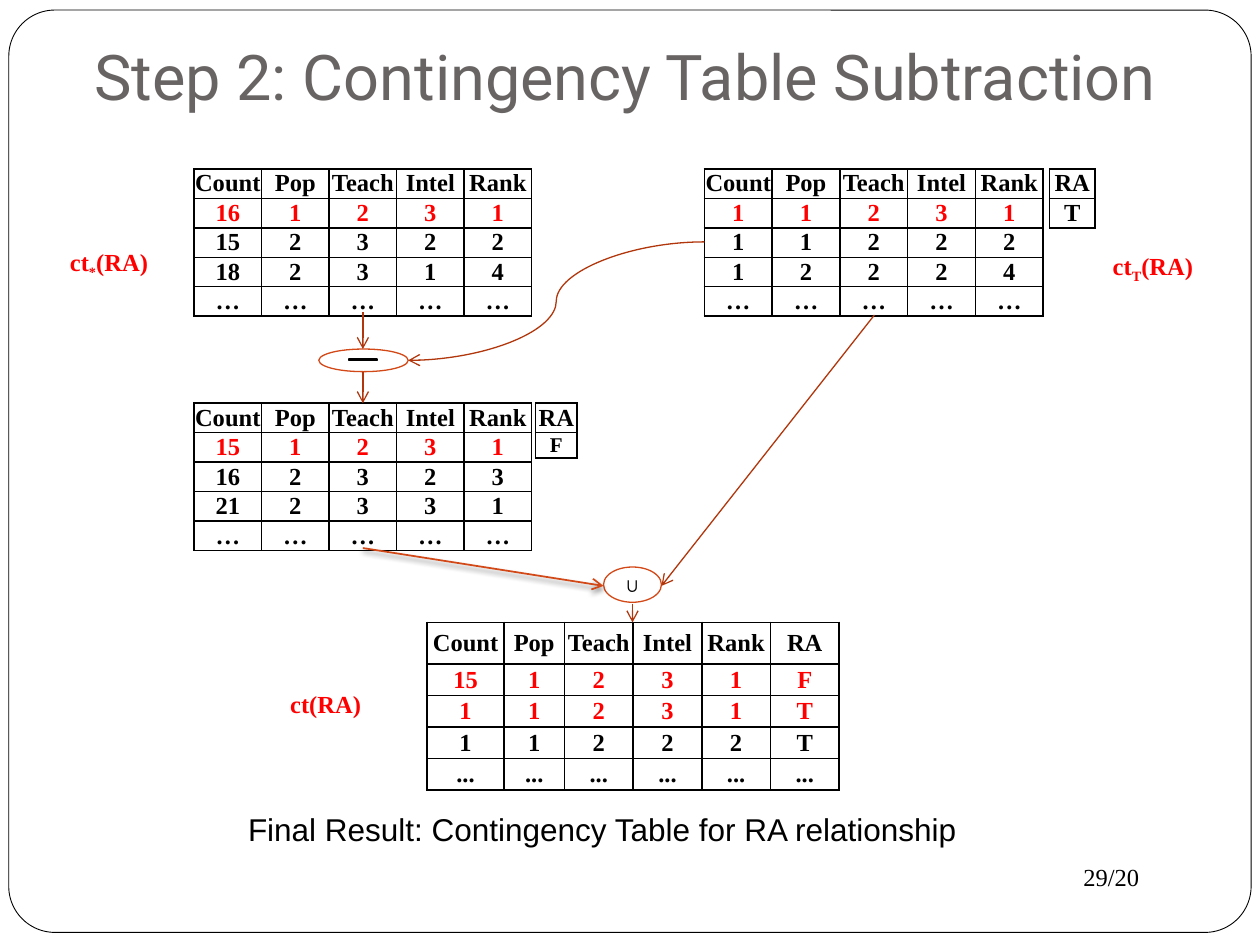
from lxml import etree
from pptx import Presentation
from pptx.dml.color import RGBColor
from pptx.enum.shapes import MSO_CONNECTOR, MSO_SHAPE
from pptx.enum.text import MSO_ANCHOR, PP_ALIGN
from pptx.oxml import parse_xml
from pptx.oxml.ns import nsdecls, qn
from pptx.util import Inches, Pt

STRAIGHT, CURVE = MSO_CONNECTOR.STRAIGHT, MSO_CONNECTOR.CURVE
ROUND_RECT, OVAL, MINUS = MSO_SHAPE.ROUNDED_RECTANGLE, MSO_SHAPE.OVAL, MSO_SHAPE.MATH_MINUS
MIDDLE, TOP, BOTTOM = MSO_ANCHOR.MIDDLE, MSO_ANCHOR.TOP, MSO_ANCHOR.BOTTOM
CENTER, LEFT = PP_ALIGN.CENTER, PP_ALIGN.LEFT

COLORS = {
    "white": "FFFFFF", "black": "000000", "red": "FF0000",
    "title": "696464", "orange": "D34817", "rust": "B1360B",
}
SERIF = "Times New Roman"
HEADER = "Count Pop Teach Intel Rank"
DOTS = "… … … … …"


def rgb(name):
    return RGBColor.from_string(COLORS[name])


class SlideBuilder:
    def __init__(self, slide):
        self.s = slide

    def run(self, p, text, size=14, color="black", font=SERIF, bold=True, base=0):
        """Add one run; base is the baseline shift in percent."""
        r = p.add_run()
        r.text = text
        r.font.size, r.font.name, r.font.bold = Pt(size), font, bold
        r.font.color.rgb = rgb(color)
        if base:
            r.font._element.set("baseline", str(base * 1000))

    def text(self, x, y, w, h, text, size, font, color="black", anchor=TOP):
        tf = self.s.shapes.add_textbox(Inches(x), Inches(y), Inches(w), Inches(h)).text_frame
        tf.word_wrap = True
        tf.vertical_anchor = anchor
        if anchor == BOTTOM:
            tf.margin_bottom = Inches(0.1)
        p = tf.paragraphs[0]
        p.alignment = LEFT
        self.run(p, text, size, color, font, bold=False)

    def shape(self, kind, x, y, w, h, fill, line, width=0.75):
        sp = self.s.shapes.add_shape(kind, Inches(x), Inches(y), Inches(w), Inches(h))
        sp.shadow.inherit = False
        if fill:
            sp.fill.solid()
            sp.fill.fore_color.rgb = rgb(fill)
        else:
            sp.fill.background()
        sp.line.color.rgb = rgb(line)
        sp.line.width = Pt(width)
        return sp

    def oval(self, x, y, w, h, runs=(), fill=None, line="white", size=14, color="red"):
        """Draw an ellipse labelled with (text, baseline shift) runs."""
        tf = self.shape(OVAL, x, y, w, h, fill, line).text_frame
        tf.margin_left = tf.margin_right = tf.margin_top = tf.margin_bottom = 0
        tf.vertical_anchor = MIDDLE
        p = tf.paragraphs[0]
        p.alignment = CENTER
        for text, base in runs:
            self.run(p, text, size, color, base=base)

    def arrow(self, start, end, kind=STRAIGHT, color="rust", width=0.75, shadow=False):
        c = self.s.shapes.add_connector(kind, *(Inches(v) for v in start + end))
        c.line.color.rgb = rgb(color)
        c.line.width = Pt(width)
        etree.SubElement(c.line._get_or_add_ln(), qn("a:tailEnd"), type="arrow")
        effects = etree.SubElement(c._element.spPr, qn("a:effectLst"))
        if shadow:
            effects.append(parse_xml(
                f'<a:outerShdw {nsdecls("a")} blurRad="{Pt(3)}" dist="{Pt(2)}" dir="5400000">'
                f'<a:srgbClr val="{COLORS["black"]}"><a:alpha val="50000"/></a:srgbClr>'
                '</a:outerShdw>'))

    def table(self, x, y, cols, heights, lines, red_rows=(), fill="white", last_size=14):
        """Draw a table; each line is one row, its cells parted by spaces."""
        tbl = self.s.shapes.add_table(
            len(lines), len(cols), Inches(x), Inches(y),
            Inches(sum(cols)), Inches(sum(heights))).table
        tbl.first_row = tbl.horz_banding = False
        for col, w in zip(tbl.columns, cols):
            col.width = Inches(w)
        for i, (line, h) in enumerate(zip(lines, heights)):
            tbl.rows[i].height = Inches(h)
            size = last_size if i == len(lines) - 1 else 14
            color = "red" if i in red_rows else "black"
            for j, text in enumerate(line.split()):
                self.cell(tbl.cell(i, j), text, size, color, fill)

    def cell(self, cell, text, size, color, fill):
        cell.margin_left = cell.margin_right = cell.margin_top = cell.margin_bottom = 0
        cell.vertical_anchor = MIDDLE
        p = cell.text_frame.paragraphs[0]
        p.alignment = CENTER
        self.run(p, text, size, color)
        if fill:
            cell.fill.solid()
            cell.fill.fore_color.rgb = rgb(fill)
        else:
            cell.fill.background()
        tc_pr = cell._tc.get_or_add_tcPr()
        if text in ("…", "..."):
            tc_pr.set("vert", "eaVert")
        for i, side in enumerate("LRTB"):
            tc_pr.insert(i, parse_xml(
                f'<a:ln{side} {nsdecls("a")} w="{Pt(1)}"><a:solidFill>'
                f'<a:srgbClr val="{COLORS["black"]}"/></a:solidFill></a:ln{side}>'))


def main():
    prs = Presentation()
    prs.slide_width, prs.slide_height = Inches(10), Inches(7.5)
    b = SlideBuilder(prs.slides.add_slide(prs.slide_layouts[6]))

    frame = b.shape(ROUND_RECT, 0.07, 0.08, 9.86, 7.32, "white", "black", 0.5)
    frame.adjustments[0] = 0.05
    b.text(8.5, 6.79, 1, 0.34, "29/20", 14, SERIF)
    b.text(0.65, 0.28, 8.92, 0.72, "Step 2: Contingency Table Subtraction", 36, "Roboto",
           "title", BOTTOM)

    five_cols = [2.68 / 5] * 5
    b.table(1.54, 1.34, five_cols, [0.23] * 4 + [0.2],
            [HEADER, "16 1 2 3 1", "15 2 3 2 2", "18 2 3 1 4", DOTS], {1})
    b.table(5.59, 1.34, [2.69 / 5] * 5, [0.23] * 5,
            [HEADER, "1 1 2 3 1", "1 1 2 2 2", "1 2 2 2 4", DOTS], {1}, fill=None)
    b.table(8.33, 1.34, [0.36], [0.23] * 2, ["RA", "T"])
    b.table(1.54, 3.2, five_cols, [0.23] * 4 + [0.22],
            [HEADER, "15 1 2 3 1", "16 2 3 2 3", "21 2 3 3 1", DOTS], {1})
    b.table(4.25, 3.2, [0.33], [0.23, 0.2], ["RA", "F"], last_size=12)
    b.table(3.39, 4.94, [0.61, 0.48] + [0.545] * 4, [0.33] + [0.25] * 4,
            [HEADER + " RA", "15 1 2 3 1 F", "1 1 2 3 1 T", "1 1 2 2 2 T",
             "... ... ... ... ... ..."], {1, 2})

    b.oval(2.53, 2.77, 0.71, 0.18, line="orange")
    b.shape(MINUS, 2.73, 2.83, 0.3, 0.05, "white", "black", 1)
    b.oval(4.79, 4.5, 0.46, 0.28, [("∪", 0)], line="orange", size=12, color="black")
    b.oval(0.35, 1.93, 1.03, 0.33, [("ct", 0), ("*", -25), ("(RA)", 0)], "white")
    b.oval(8.54, 1.96, 1.22, 0.33, [("ct", 0), ("T", -25), ("(RA)", 0)])
    b.oval(2.07, 5.42, 1.03, 0.33, [("ct(RA)", 0)], "white")

    b.arrow((2.88, 2.48), (2.88, 2.77))
    b.arrow((2.88, 2.95), (2.88, 3.2))
    b.arrow((5.59, 1.92), (3.24, 2.86), CURVE)
    b.arrow((6.94, 2.5), (5.25, 4.65))
    b.arrow((2.88, 4.35), (4.79, 4.65), color="orange", width=1, shadow=True)
    b.arrow((5.02, 4.79), (5.02, 4.94))

    b.text(1.87, 6.38, 6.11, 0.4, "Final Result: Contingency Table for RA relationship",
           18, "Arial")
    prs.save("out.pptx")


if __name__ == "__main__":
    main()
